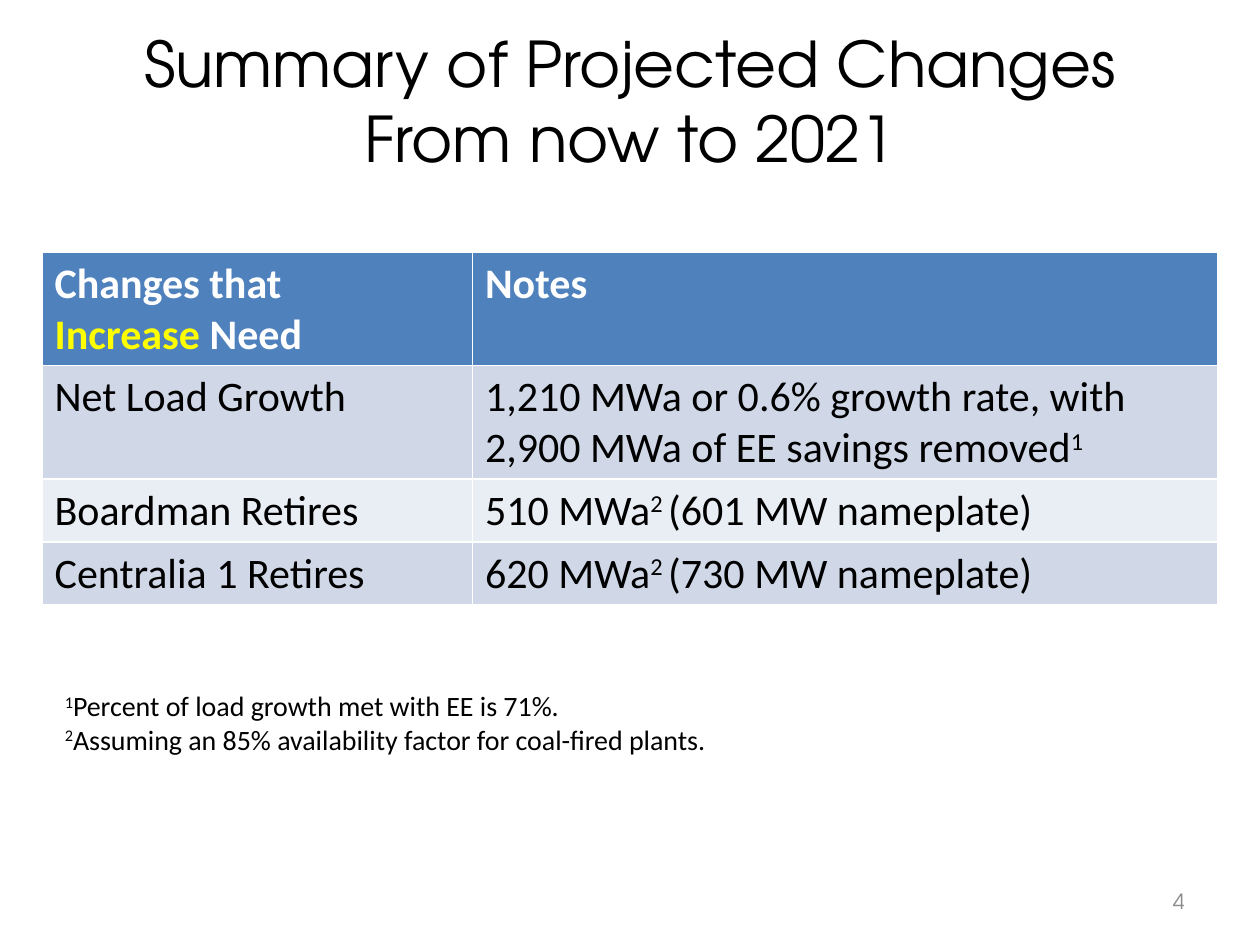
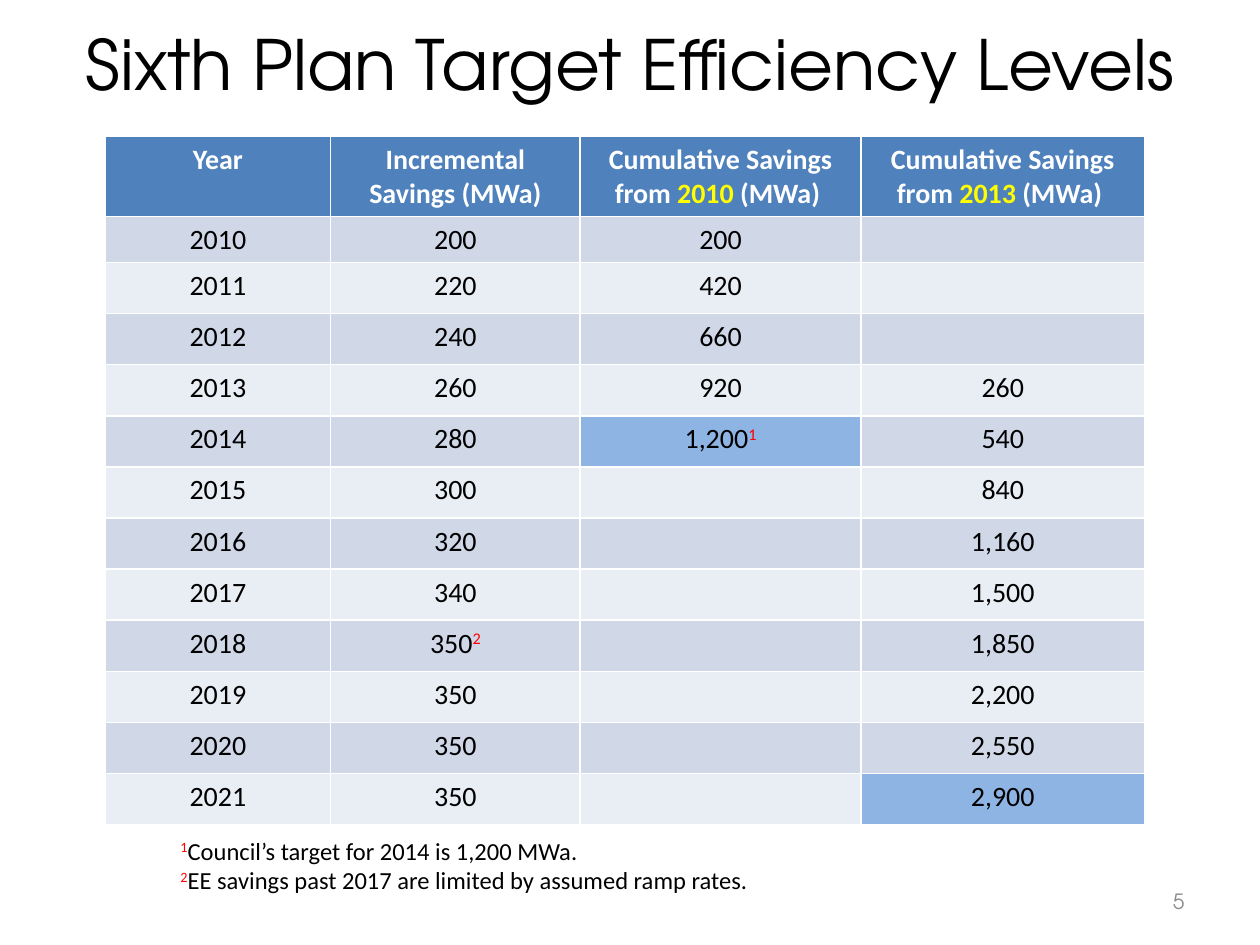
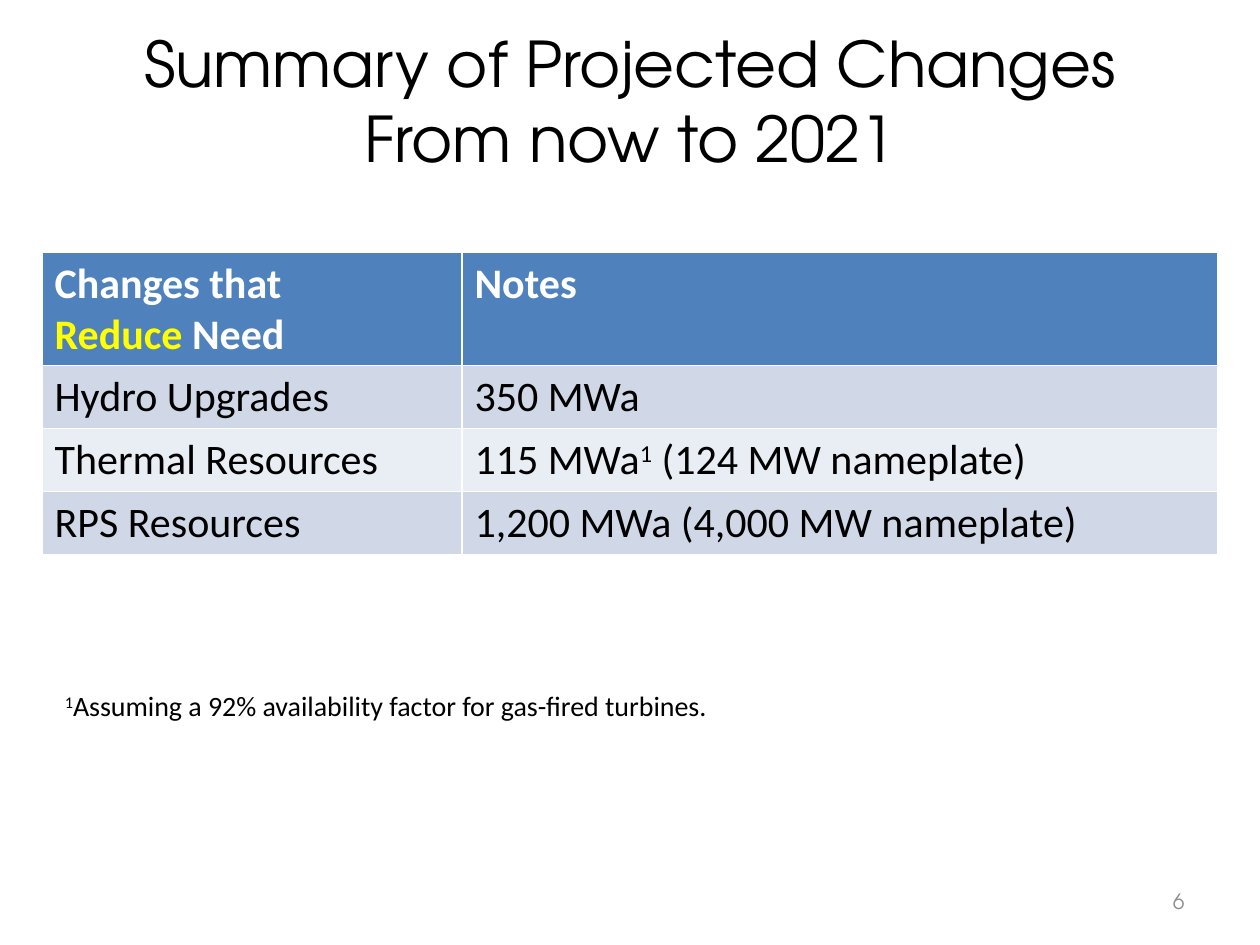
from lxml import etree
from pptx import Presentation, util as u
from pptx.dml.color import RGBColor
from pptx.enum import text
from pptx.oxml.ns import qn

COLOURS = {"ink": "000000", "white": "FFFFFF", "accent": "FFFF00", "red": "FF0000",
           "number": "8C8C8C", "header": "4F81BD", "odd": "D0D8E8", "even": "E9EDF4",
           "target": "8EB4E3"}
HEADING, BODY = "TeX Gyre Adventor", "Calibri"
SLIDE_W, SLIDE_H = u.Inches(10), u.Inches(7.5)
COL, ROW = SLIDE_W / 120, SLIDE_H / 90
ROW_HEIGHT = 4.87
ALIGN, ANCHOR, FIT = text.PP_ALIGN, text.MSO_ANCHOR, text.MSO_AUTO_SIZE


def write(frame, content, font, size, colour="ink", mark="ink", bold=False, align=ALIGN.LEFT):
    """Between bars: ^ starts a superscript, other text is accented; \\v breaks a line."""
    points = str(int(size * 100))
    for number, line in enumerate(content.split("\n")):
        paragraph = frame.paragraphs[0] if number == 0 else frame.add_paragraph()
        paragraph.alignment = align
        for place, piece in enumerate(line.split("|")):
            raised = piece.startswith("^")
            shade = mark if raised else "accent" if place % 2 else colour
            for part, words in enumerate(piece.lstrip("^").split("\v")):
                if part:
                    paragraph.add_line_break()
                    etree.SubElement(paragraph._p[-1], qn("a:rPr"), sz=points)
                if not words:
                    continue
                run = paragraph.add_run()
                run.text = words
                for key, value in {"name": font, "size": u.Pt(size), "bold": bold}.items():
                    setattr(run.font, key, value)
                run.font.color.rgb = RGBColor.from_string(COLOURS[shade])
                if raised:
                    run.font._element.set("baseline", "30000")
        if not line:
            etree.SubElement(paragraph._p, qn("a:endParaRPr"), sz=points)


def add_text(slide, area, content, frame_format, **style):
    left, top, width, height = area
    box = slide.shapes.add_textbox(int(left * COL), int(top * ROW), int(width * COL), int(height * ROW))
    for key, value in {"word_wrap": True, **frame_format}.items():
        setattr(box.text_frame, key, value)
    write(box.text_frame, content, **style)


savings = [["Year", "Incremental Savings (MWa)",
            "Cumulative Savings\vfrom |2010| (MWa) ", "Cumulative Savings\vfrom |2013| (MWa) "]]
increments = [200, 220, 240, 260, 280, 300, 320, 340, 350, 350, 350, 350]
since_2010 = since_2013 = 0
for year, increment in enumerate(increments, 2010):
    since_2010 += increment
    since_2013 += increment if year >= 2013 else 0
    savings.append([str(year), f"{increment}|^2|" if year == 2018 else str(increment),
                    f"{since_2010:,}" + ("|^1|" if year == 2014 else "") if year <= 2014 else "",
                    f"{since_2013:,}" if year >= 2013 else ""])

summary = {"title": "Summary of Projected Changes\vFrom now to 2021", "title_area": (6, 2, 108, 15),
           "title_size": 36, "corner": (4, 24), "size": 24, "align": ALIGN.LEFT, "short_rows": {},
           "targets": [], "mark": "ink", "note_size": 16}
pages = [
    {**summary, "columns": [41, 71], "table_height": 33.6,
     "rows": [["Changes that \v|Increase |Need", "Notes"],
              ["Net Load Growth",
               "1,210 MWa or 0.6% growth rate, with\n2,900 MWa of EE savings removed|^1|"],
              ["Boardman Retires", "510 MWa|^2 |(601 MW nameplate)"],
              ["Centralia 1 Retires", "620 MWa|^2 |(730 MW nameplate)"]],
     "note": "|^1|Percent of load growth met with EE is 71%.\n"
             "|^2|Assuming an 85% availability factor for coal-fired plants.",
     "note_area": (5, 65, 91, 7.7)},
    {"title": "Sixth Plan Target Efficiency Levels", "title_area": (4, 2, 112, 8),
     "title_size": 39.6, "corner": (10, 13), "size": 16, "align": ALIGN.CENTER,
     "short_rows": {1: 1.5}, "targets": [(5, 2), (12, 3)], "mark": "red", "note_size": 14,
     "columns": [21.5, 23.75, 26.75, 27], "table_height": 65.5, "rows": savings,
     "note": "|^1|Council’s target for 2014 is 1,200 MWa. \v|^2|"
             "EE savings past 2017 are limited by assumed ramp rates.",
     "note_area": (16, 79, 99, 6.8)},
    {**summary, "columns": [40, 72], "table_height": 28.8,
     "rows": [["Changes that \v|Reduce |Need", "Notes"],
              ["Hydro Upgrades", "350 MWa"],
              ["Thermal Resources", "115 MWa|^1| (124 MW nameplate)"],
              ["RPS Resources", "1,200 MWa (4,000 MW nameplate)"]],
     "note": "|^1|Assuming a 92% availability factor for gas-fired turbines.",
     "note_area": (5, 65, 91, 4.4)},
]

deck = Presentation()
deck.slide_width, deck.slide_height = SLIDE_W, SLIDE_H

for page_number, page in enumerate(pages, 4):
    slide = deck.slides.add_slide(deck.slide_layouts[6])
    add_text(slide, page["title_area"], page["title"], {"vertical_anchor": ANCHOR.MIDDLE},
             font=HEADING, size=page["title_size"], align=ALIGN.CENTER)

    rows, columns = page["rows"], page["columns"]
    left, top = page["corner"]
    holder = slide.shapes.add_table(len(rows), len(columns), int(left * COL), int(top * ROW),
                                    int(sum(columns) * COL), int(page["table_height"] * ROW))
    changes = holder.table
    for column, width in zip(changes.columns, columns):
        column.width = int(width * COL)
    for r, entries in enumerate(rows):
        changes.rows[r].height = int(page["short_rows"].get(r, ROW_HEIGHT) * ROW)
        band = "header" if r == 0 else "odd" if r % 2 else "even"
        for c, entry in enumerate(entries):
            cell = changes.cell(r, c)
            cell.fill.solid()
            cell.fill.fore_color.rgb = RGBColor.from_string(
                COLOURS["target" if (r, c) in page["targets"] else band])
            write(cell.text_frame, entry, BODY, page["size"], "ink" if r else "white",
                  page["mark"], r == 0, page["align"])
    holder.height = int(page["table_height"] * ROW)

    add_text(slide, (86, 83.4, 28, 4.8), str(page_number), {"vertical_anchor": ANCHOR.MIDDLE},
             font=HEADING, size=12, colour="number", align=ALIGN.RIGHT)
    add_text(slide, page["note_area"], page["note"], {"auto_size": FIT.SHAPE_TO_FIT_TEXT},
             font=BODY, size=page["note_size"], mark=page["mark"])

deck.save("out.pptx")
